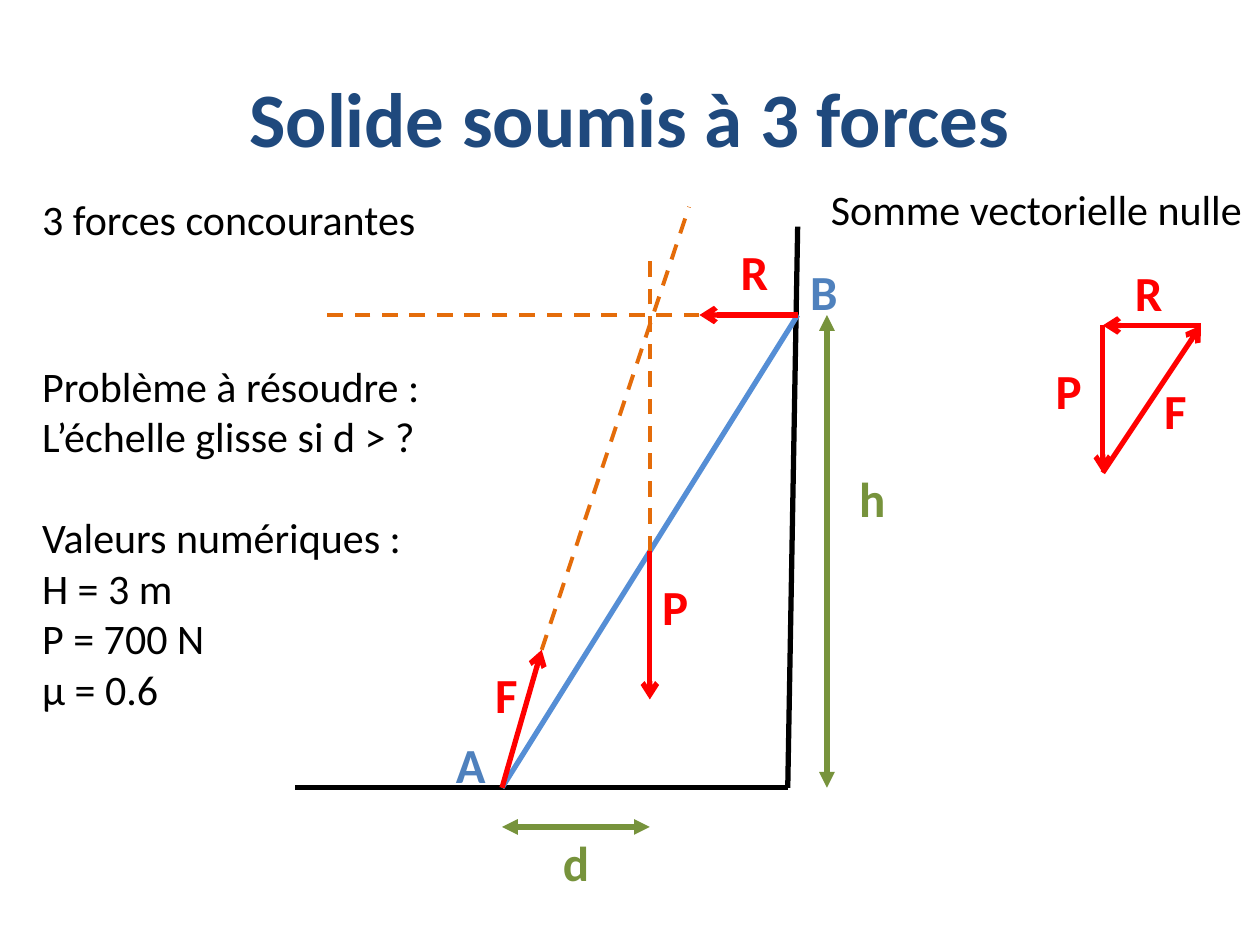
from pptx import Presentation
from pptx.dml.color import RGBColor
from pptx.enum.dml import MSO_LINE
from pptx.enum.shapes import MSO_CONNECTOR
from pptx.enum.text import MSO_ANCHOR, MSO_AUTO_SIZE, PP_ALIGN
from pptx.oxml.ns import qn
from pptx.util import Cm, Pt
from lxml.etree import SubElement

COLORS = {
    "title": "1F497D",
    "text": "000000",
    "support": "000000",
    "ladder": "558ED5",
    "point": "4F81BD",
    "force": "FF0000",
    "dimension": "77933C",
    "action_line": "E46C0A",
}
FONT = "Calibri"


def color(name):
    return RGBColor.from_string(COLORS[name])


def style_font(paragraph, size, color_name, bold=False):
    font = paragraph.font
    font.name, font.size, font.bold = FONT, Pt(size), bold
    font.color.rgb = color(color_name)


def add_line(slide, box, start, end, color_name, width=3, dashed=False, head=None, tail=None):
    left, top = box
    line = slide.shapes.add_connector(
        MSO_CONNECTOR.STRAIGHT,
        Cm(left + start[0]), Cm(top + start[1]),
        Cm(left + end[0]), Cm(top + end[1]),
    )
    line.line.color.rgb = color(color_name)
    line.line.width = Pt(width)
    if dashed:
        line.line.dash_style = MSO_LINE.DASH
    properties = line._element.spPr
    outline = properties.find(qn("a:ln"))
    for tag, arrow in (("a:headEnd", head), ("a:tailEnd", tail)):
        if arrow:
            SubElement(outline, qn(tag), type=arrow)
    SubElement(properties, qn("a:effectLst"))


def add_force(slide, box, start, end):
    add_line(slide, box, start, end, "force", tail="arrow")


def add_label(slide, box, letter, offset, color_name):
    left, top = box
    label = slide.shapes.add_textbox(Cm(left + offset[0]), Cm(top + offset[1]), Cm(1.19), Cm(1.45))
    label.text_frame.word_wrap = True
    label.text_frame.text = letter
    style_font(label.text_frame.paragraphs[0], 28, color_name, bold=True)


def add_title(slide, left, top, width, height):
    title = slide.shapes.title
    title.left, title.top, title.width, title.height = Cm(left), Cm(top), Cm(width), Cm(height)
    title.text_frame.text = "Solide soumis à 3 forces"
    title.text_frame.vertical_anchor = MSO_ANCHOR.MIDDLE
    heading = title.text_frame.paragraphs[0]
    heading.alignment = PP_ALIGN.CENTER
    style_font(heading, 44, "title", bold=True)


def add_notes_block(slide, left, top, width, height, groups):
    block = slide.shapes.add_textbox(Cm(left), Cm(top), Cm(width), Cm(height))
    frame = block.text_frame
    frame.word_wrap = False
    frame.auto_size = MSO_AUTO_SIZE.SHAPE_TO_FIT_TEXT
    frame.text = "\n".join(line for group in groups for line in group)
    for paragraph in frame.paragraphs:
        style_font(paragraph, 24, "text")
    index = 0
    for group in groups[:-1]:
        index += len(group)
        frame.paragraphs[index].space_before = Pt(29)


def add_ladder_diagram(slide, left, top):
    box = left, top
    ground, corner, wall_top = (0, 11.73), (9.93, 11.73), (10.13, 0.42)
    foot, contact = (4.17, 11.73), (10.13, 2.2)
    center = ((foot[0] + contact[0]) / 2, (foot[1] + contact[1]) / 2)
    weight_tip, reaction_tip, foot_tip = (center[0], 9.95), (8.15, contact[1]), (4.97, 8.95)
    depth_y, height_x = 12.52, 10.72

    add_line(slide, box, ground, corner, "support")
    add_line(slide, box, corner, wall_top, "support")
    add_line(slide, box, foot, contact, "ladder")
    for start, end in (
        ((foot[0], depth_y), (center[0], depth_y)),
        ((height_x, contact[1]), (height_x, foot[1])),
    ):
        add_line(slide, box, start, end, "dimension", head="triangle", tail="triangle")
    for start, tip, far_end in (
        (center, weight_tip, None),
        (contact, reaction_tip, (0.6, contact[1])),
        (foot, foot_tip, (7.94, 0.02)),
    ):
        add_force(slide, box, start, tip)
        action_start = tip if far_end else center
        action_end = far_end or (center[0], 1.01)
        add_line(slide, box, action_start, action_end, "action_line", width=2.25, dashed=True)
    for letter, offset, color_name in (
        ("P", (7.15, 7.35), "force"),
        ("R", (8.73, 0.6), "force"),
        ("F", (3.78, 9.13), "force"),
        ("A", (2.99, 10.53), "point"),
        ("B", (10.13, 1), "point"),
        ("h", (11.12, 5.17), "dimension"),
        ("d", (5.15, 12.51), "dimension"),
    ):
        add_label(slide, box, letter, offset, color_name)


def add_force_triangle(slide, left, top):
    box = left, top
    upper_left, upper_right, lower = (1.2, 1.4), (3.18, 1.4), (1.2, 4.37)
    for letter, start, end, offset in (
        ("R", upper_right, upper_left, (1.6, 0)),
        ("P", upper_left, lower, (0, 1.98)),
        ("F", lower, upper_right, (2.19, 2.39)),
    ):
        add_force(slide, box, start, end)
        add_label(slide, box, letter, offset, "force")


def main():
    deck = Presentation()
    deck.slide_width, deck.slide_height = Cm(25.4), Cm(19.05)
    slide = deck.slides.add_slide(deck.slide_layouts[5])
    add_title(slide, 1.27, 0.76, 22.86, 3.18)
    add_ladder_diagram(slide, 5.95, 4.15)
    add_force_triangle(slide, 21.03, 5.16)
    add_notes_block(slide, 0.6, 3.77, 8.3, 1.28, [["3 forces concourantes"]])
    add_notes_block(slide, 16.5, 3.57, 8.9, 1.28, [["Somme vectorielle nulle"]])
    add_notes_block(slide, 0.6, 7.14, 8.2, 7.44, [
        ["Problème à résoudre :", "L’échelle glisse si d > ?"],
        ["Valeurs numériques :", "H = 3 m", "P = 700 N", "µ = 0.6"],
    ])
    deck.save("out.pptx")


if __name__ == "__main__":
    main()
